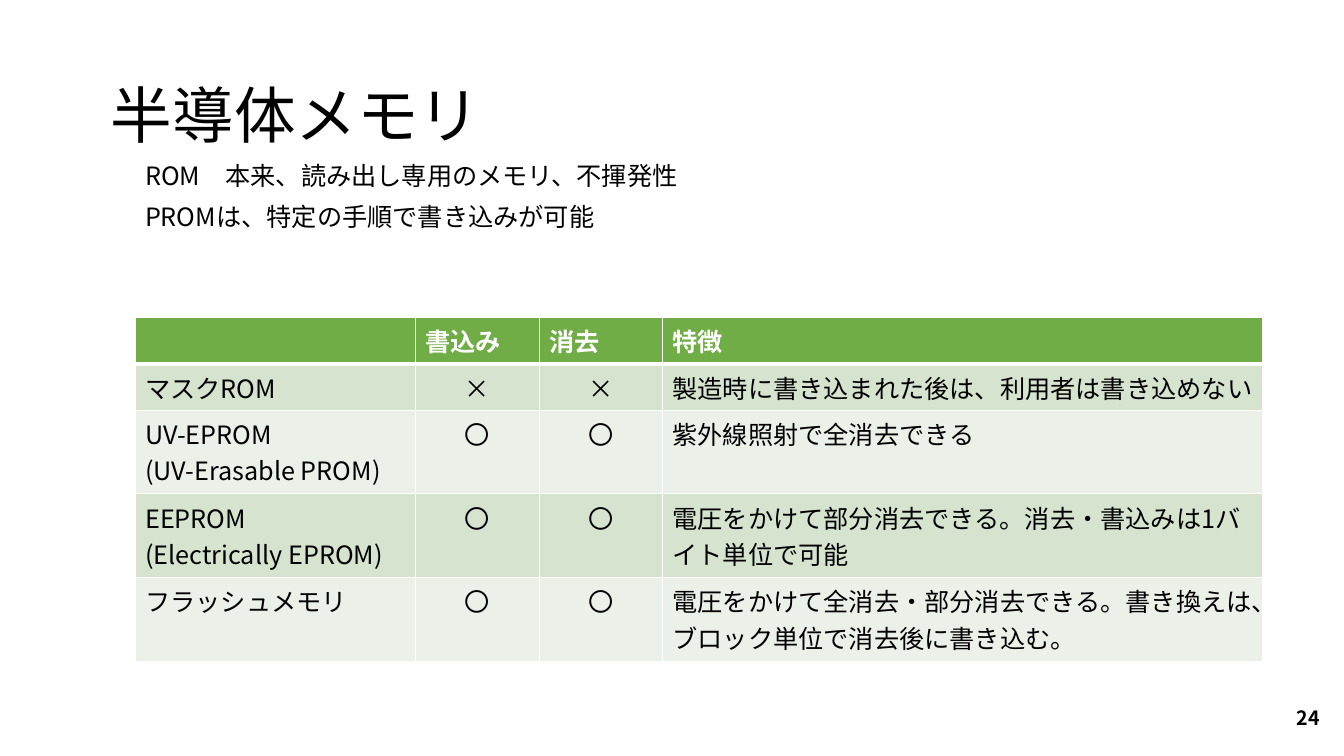
from lxml import etree
from pptx import Presentation
from pptx.dml.color import RGBColor
from pptx.enum.text import MSO_ANCHOR, PP_ALIGN
from pptx.oxml.ns import qn
from pptx.util import Inches, Pt

LEFT, CENTER, RIGHT = PP_ALIGN.LEFT, PP_ALIGN.CENTER, PP_ALIGN.RIGHT
TOP, MIDDLE = MSO_ANCHOR.TOP, MSO_ANCHOR.MIDDLE

# Content
TITLE = "半導体メモリ"
NOTES = ["ROM　本来、読み出し専用のメモリ、不揮発性", "PROMは、特定の手順で書き込みが可能"]
PAGE_NUMBER = "24"
MEMORY_TYPES = [
    ("", "書込み", "消去", "特徴"),
    ("マスクROM", "×", "×", "製造時に書き込まれた後は、利用者は書き込めない"),
    ("UV-EPROM\n(UV-Erasable PROM)", "〇", "〇", "紫外線照射で全消去できる"),
    ("EEPROM\n(Electrically EPROM)", "〇", "〇",
     "電圧をかけて部分消去できる。消去・書込みは1バイト単位で可能"),
    ("フラッシュメモリ", "〇", "〇",
     "電圧をかけて全消去・部分消去できる。書き換えは、ブロック単位で消去後に書き込む。"),
]

# Format
FONT = "Noto Sans CJK JP"
BLACK = RGBColor(0x00, 0x00, 0x00)
WHITE = RGBColor(0xFF, 0xFF, 0xFF)
GREEN = RGBColor(0x70, 0xAD, 0x47)
BANDS = (RGBColor(0xEB, 0xF1, 0xE9), RGBColor(0xD5, 0xE3, 0xCF))
COLUMN_WIDTHS = (2.78, 1.23, 1.22, 5.95)
ROW_HEIGHTS = (0.46, 0.46, 0.83, 0.83, 0.83)
MARK_COLUMNS = (1, 2)
TITLE_AREA = (1, 0.68, 11.33, 0.99)
NOTES_AREA = (1.34, 1.57, 10.05, 4.92)
NUMBER_AREA = (10.19, 6.92, 3, 0.4)
TABLE_AREA = (1.34, 3.15, sum(COLUMN_WIDTHS), sum(ROW_HEIGHTS))


def write(frame, lines, size, color=BLACK, bold=False, **para_format):
    """Fill a text frame with one paragraph per line."""
    font_format = {"name": FONT, "size": Pt(size), "bold": bold}
    for index, line in enumerate(lines):
        para = frame.paragraphs[0] if index == 0 else frame.add_paragraph()
        for name, value in para_format.items():
            setattr(para, name, value)
        span = para.add_run()
        span.text = line
        for name, value in font_format.items():
            setattr(span.font, name, value)
        span.font.color.rgb = color
        etree.SubElement(span.font._element, qn("a:ea"), typeface=FONT)


def place(box, area, anchor):
    """Move a text shape and set how its text sits."""
    box.left, box.top, box.width, box.height = map(Inches, area)
    box.text_frame.word_wrap = True
    box.text_frame.vertical_anchor = anchor
    return box.text_frame


def add_borders(cell, widths):
    """Draw white cell borders; widths maps each side to points."""
    properties = cell._tc.get_or_add_tcPr()
    for side, width in widths.items():
        line = etree.SubElement(properties, qn("a:ln" + side), w=str(Pt(width)))
        fill = etree.SubElement(line, qn("a:solidFill"))
        etree.SubElement(fill, qn("a:srgbClr"), val=str(WHITE))


deck = Presentation()
deck.slide_width, deck.slide_height = Inches(13.33), Inches(7.5)
page = deck.slides.add_slide(deck.slide_layouts[5])

# Title, notes and page number
write(place(page.shapes.title, TITLE_AREA, MIDDLE), [TITLE], 44,
      alignment=LEFT, line_spacing=0.9)
notes_box = page.shapes.add_textbox(*map(Inches, NOTES_AREA))
write(place(notes_box, NOTES_AREA, TOP), NOTES, 18,
      line_spacing=0.9, space_before=Pt(10))
number_box = page.shapes.add_textbox(*map(Inches, NUMBER_AREA))
write(place(number_box, NUMBER_AREA, MIDDLE), [PAGE_NUMBER], 14,
      bold=True, alignment=RIGHT)

# Table of memory types
table = page.shapes.add_table(
    len(ROW_HEIGHTS), len(COLUMN_WIDTHS), *map(Inches, TABLE_AREA)).table
for column, width in zip(table.columns, COLUMN_WIDTHS):
    column.width = Inches(width)
for row_index, texts in enumerate(MEMORY_TYPES):
    header = row_index == 0
    table.rows[row_index].height = Inches(ROW_HEIGHTS[row_index])
    for column_index, text in enumerate(texts):
        cell = table.cell(row_index, column_index)
        add_borders(cell, {"L": 1, "R": 1, "T": 3 if row_index == 1 else 1,
                           "B": 3 if header else 1})
        cell.fill.solid()
        cell.fill.fore_color.rgb = GREEN if header else BANDS[row_index % 2]
        centered = column_index in MARK_COLUMNS and not header
        if text:
            write(cell.text_frame, text.split("\n"), 18,
                  color=WHITE if header else BLACK, bold=header,
                  alignment=CENTER if centered else LEFT)

deck.save("out.pptx")
